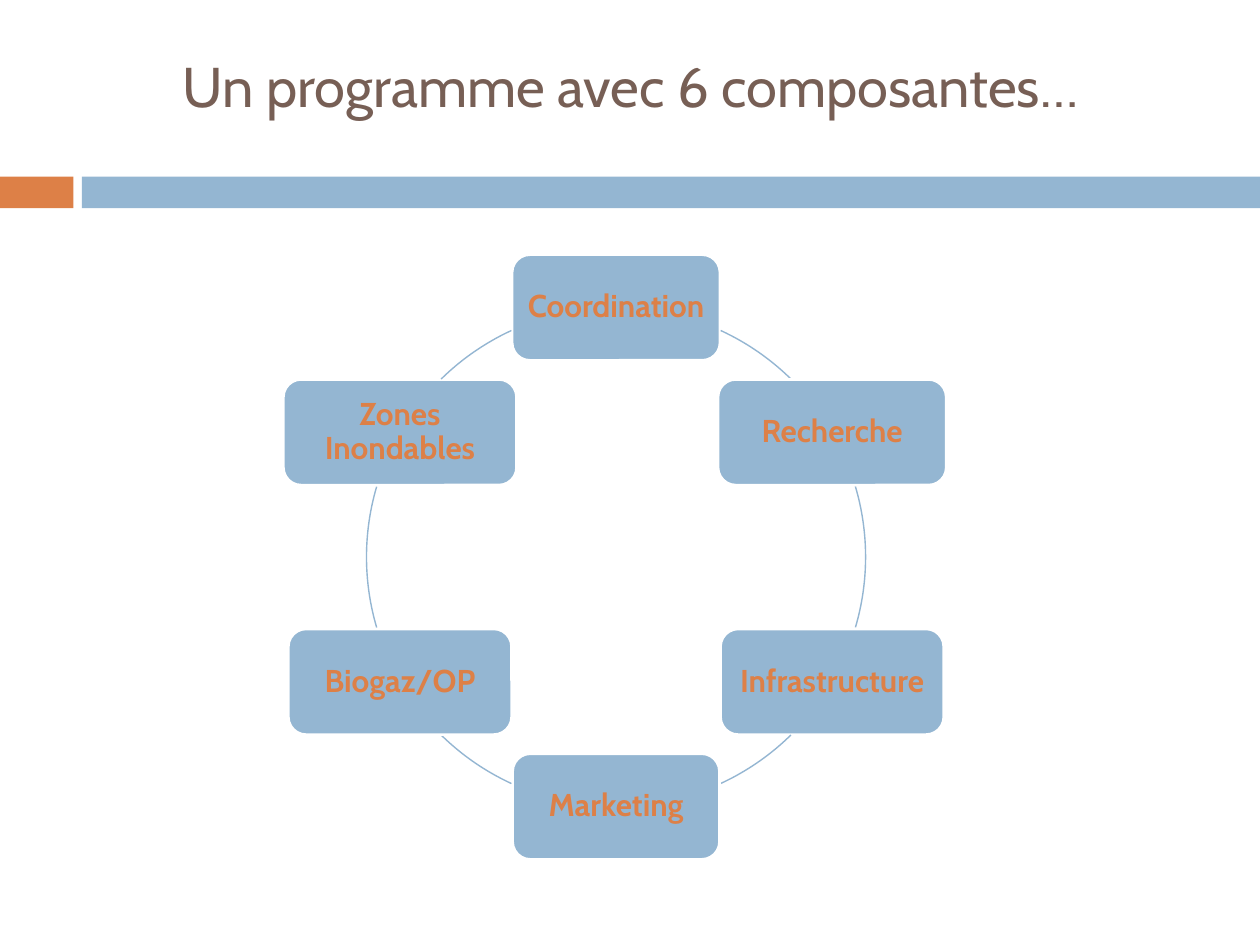
import math

import pptx
import pptx.dml.color
import pptx.enum.shapes
import pptx.enum.text
import pptx.util

Cm = pptx.util.Cm
Pt = pptx.util.Pt
SHAPES = pptx.enum.shapes.MSO_SHAPE

FONT = "Cabin"
BLUE, ORANGE, BROWN, WHITE = "94B6D2", "DD8047", "775F55", "FFFFFF"
CENTER_X, CENTER_Y, RADIUS = 12.42, 11.23, 5.03
BOX_HEIGHT = 2.13
COMPONENTS = [
    ("Coordination", 4.19),
    ("Recherche", 4.6),
    ("Infrastructure", 4.5),
    ("Marketing", 4.17),
    ("Biogaz/OP", 4.5),
    ("Zones Inondables", 4.7),
]
ARCS = [(-65.2, -45.5), (-16.4, 16.4), (45.5, 65.2),
        (114.8, 134.5), (163.6, 196.4), (225.5, 245.2)]


def color(value):
    """Return the colour for a hex string."""
    return pptx.dml.color.RGBColor.from_string(value)


def add_shape(slide, kind, left, top, width, height, fill=None, line=None, weight=1):
    """Add a preset shape, measured in centimetres, with flat colours."""
    shape = slide.shapes.add_shape(kind, Cm(left), Cm(top), Cm(width), Cm(height))
    shape.shadow.inherit = False
    if fill:
        shape.fill.solid()
        shape.fill.fore_color.rgb = color(fill)
    else:
        shape.fill.background()
    if line:
        shape.line.color.rgb = color(line)
        shape.line.width = Pt(weight)
    else:
        shape.line.fill.background()
    return shape


def write(shape, text, size, text_color, bold=False):
    """Write one centred run in a shape and return its paragraph."""
    frame = shape.text_frame
    frame.word_wrap = True
    frame.auto_size = pptx.enum.text.MSO_AUTO_SIZE.NONE
    frame.vertical_anchor = pptx.enum.text.MSO_ANCHOR.MIDDLE
    paragraph = frame.paragraphs[0]
    paragraph.alignment = pptx.enum.text.PP_ALIGN.CENTER
    run = paragraph.add_run()
    run.text = text
    run.font.name = FONT
    run.font.size = Pt(size)
    run.font.bold = bold
    run.font.color.rgb = color(text_color)
    return paragraph


def add_title(slide, text):
    """Place and fill the title placeholder."""
    title = slide.shapes.title
    title.left, title.top = Cm(0.03), Cm(0.64)
    title.width, title.height = Cm(25.37), Cm(2.16)
    write(title, text, 32, BROWN)


def add_component(slide, text, width, angle):
    """Add a rounded box centred on the ring at an angle in degrees."""
    left = CENTER_X + RADIUS * math.cos(math.radians(angle)) - width / 2
    top = CENTER_Y + RADIUS * math.sin(math.radians(angle)) - BOX_HEIGHT / 2
    box = add_shape(slide, SHAPES.ROUNDED_RECTANGLE, left, top, width, BOX_HEIGHT,
                    BLUE, WHITE, 1.5)
    frame = box.text_frame
    frame.margin_left = frame.margin_right = Cm(0.18)
    frame.margin_top = frame.margin_bottom = Cm(0.18)
    paragraph = write(box, text, 18, ORANGE, True)
    paragraph.line_spacing = 0.9
    paragraph.space_after = Pt(6.3)


def add_arc(slide, start, end):
    """Add a part of the ring between two angles in degrees."""
    arc = add_shape(slide, SHAPES.ARC, CENTER_X - RADIUS, CENTER_Y - RADIUS,
                    2 * RADIUS, 2 * RADIUS, line=BLUE, weight=0.79)
    for index, angle in enumerate((start, end)):
        arc.adjustments[index] = angle % 360 * 0.6


def main():
    """Build the slide and save it."""
    presentation = pptx.Presentation()
    presentation.slide_width, presentation.slide_height = Cm(25.4), Cm(19.05)
    slide = presentation.slides.add_slide(presentation.slide_layouts[5])
    add_title(slide, "Un programme avec 6 composantes…")
    add_shape(slide, SHAPES.RECTANGLE, 0, 3.56, 1.48, 0.64, ORANGE)
    add_shape(slide, SHAPES.RECTANGLE, 1.65, 3.56, 23.75, 0.64, BLUE)
    for index, (text, width) in enumerate(COMPONENTS):
        add_component(slide, text, width, 60 * index - 90)
        add_arc(slide, *ARCS[index])
    presentation.save("out.pptx")


if __name__ == "__main__":
    main()
